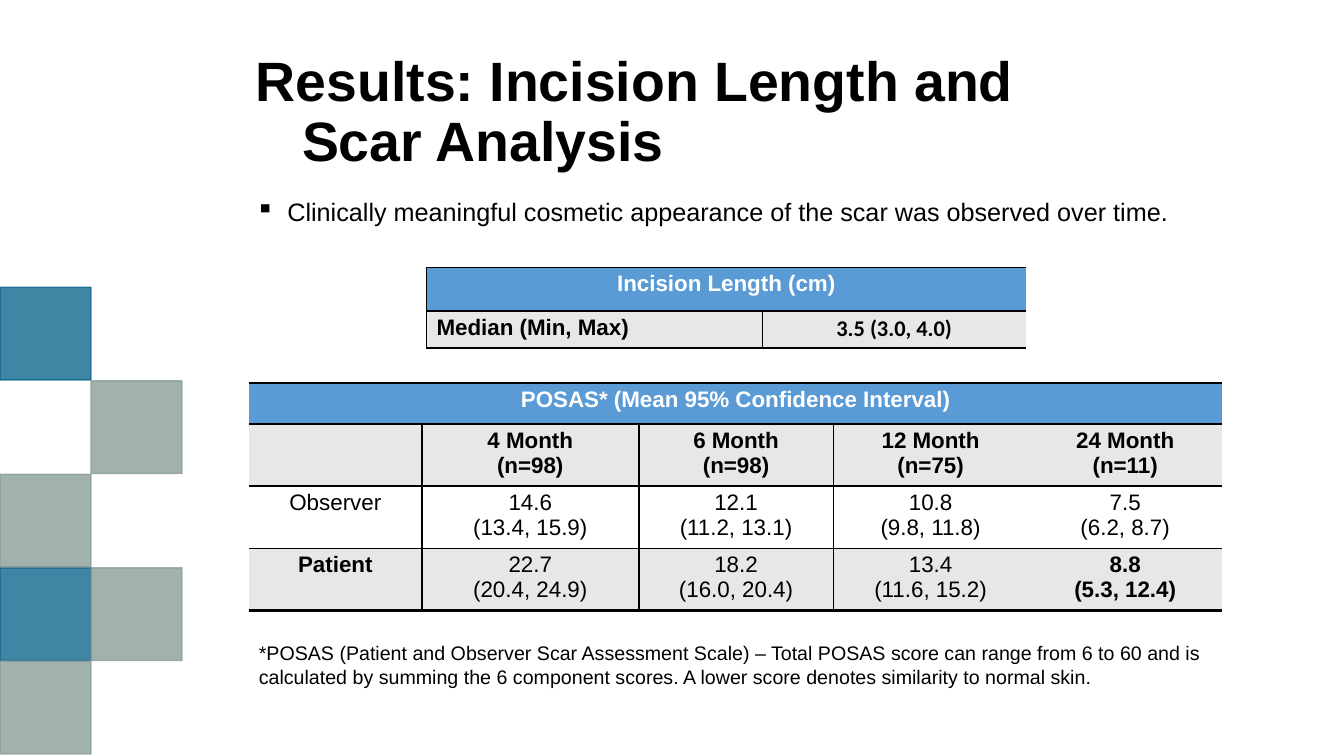
from lxml.etree import SubElement
from pptx import Presentation
from pptx.dml.color import RGBColor
from pptx.enum.shapes import MSO_SHAPE
from pptx.enum.text import MSO_ANCHOR, PP_ALIGN
from pptx.oxml.ns import qn
from pptx.util import Pt

BLACK = RGBColor(0x00, 0x00, 0x00)
WHITE = RGBColor(0xFF, 0xFF, 0xFF)
HEADER_BLUE = RGBColor(0x5B, 0x9B, 0xD5)
BAND_GREY = RGBColor(0xE7, 0xE7, 0xE7)
TEAL = RGBColor(0x00, 0x5D, 0x85)
SAGE = RGBColor(0x82, 0x97, 0x94)

SQUARES = [(0, 0, TEAL), (0, 3, TEAL), (0, 4, SAGE),
           (1, 1, SAGE), (1, 3, SAGE), (0, 2, SAGE)]
POSAS = [
    ["", "4 Month\n(n=98)", "6 Month\n(n=98)", "12 Month\n(n=75)", "24 Month\n(n=11)"],
    ["Observer", "14.6\n(13.4, 15.9)", "12.1\n(11.2, 13.1)", "10.8\n(9.8, 11.8)", "7.5\n(6.2, 8.7)"],
    ["Patient", "22.7\n(20.4, 24.9)", "18.2\n(16.0, 20.4)", "13.4\n(11.6, 15.2)", "8.8\n(5.3, 12.4)"],
]


def style(p, size, color=BLACK, bold=False, font="Arial"):
    p.font.name = font
    p.font.size = Pt(size)
    p.font.bold = bold
    p.font.color.rgb = color


def hang(p, indent):
    pPr = p._p.get_or_add_pPr()
    pPr.set("marL", str(Pt(indent)))
    pPr.set("indent", str(-Pt(indent)))
    return pPr


def add_text(slide, box, text, size, bold=False, anchor=MSO_ANCHOR.TOP):
    tf = slide.shapes.add_textbox(*map(Pt, box)).text_frame
    tf.word_wrap = True
    tf.vertical_anchor = anchor
    p = tf.paragraphs[0]
    p.text = text
    style(p, size, bold=bold)
    return p


def add_title(slide, box):
    p = add_text(slide, box, "Results: Incision Length and\vScar Analysis",
                 39.6, True, MSO_ANCHOR.MIDDLE)
    p.line_spacing = 0.9
    hang(p, 33)


def add_finding(slide, box):
    p = add_text(slide, box, "Clinically meaningful cosmetic appearance of the scar "
                 "was observed over time.", 18)
    SubElement(hang(p, 22.5), qn("a:buChar"), char="▪")


def add_squares(slide, box):
    left, top, width, height = box
    col_step, row_step = width / 2, height / 5
    for col, row, color in SQUARES:
        sp = slide.shapes.add_shape(
            MSO_SHAPE.RECTANGLE, Pt(left + col * col_step), Pt(top + row * row_step),
            Pt(col_step), Pt(row_step - 0.6))
        sp.shadow.inherit = False
        sp.fill.solid()
        sp.fill.fore_color.rgb = color
        sp.line.color.rgb = color
        sp.line.width = Pt(1)
        for clr in sp._element.spPr.iter(qn("a:srgbClr")):
            SubElement(clr, qn("a:alpha"), val="75000")


def set_borders(cell, widths):
    tcPr = cell._tc.get_or_add_tcPr()
    for side, width in zip("LRTB", widths):
        ln = SubElement(tcPr, qn(f"a:ln{side}"), w=str(Pt(width)))
        if width:
            SubElement(SubElement(ln, qn("a:solidFill")), qn("a:srgbClr"), val=str(BLACK))
        else:
            SubElement(ln, qn("a:noFill"))


def fill_cell(cell, text, fill, color=BLACK, bold=False,
              align=PP_ALIGN.CENTER, font="Arial"):
    cell.margin_top = cell.margin_bottom = Pt(3)
    cell.fill.solid()
    cell.fill.fore_color.rgb = fill
    cell.text = text
    for p in cell.text_frame.paragraphs:
        p.alignment = align
        style(p, 16, color, bold, font)


def add_grid(slide, box, col_widths, row_heights, heading):
    table = slide.shapes.add_table(len(row_heights), len(col_widths), *map(Pt, box)).table
    table.first_row = table.horz_banding = False
    for column, width in zip(table.columns, col_widths):
        column.width = Pt(width)
    for row, height in zip(table.rows, row_heights):
        row.height = Pt(height)
    table.cell(0, 0).merge(table.cell(0, len(col_widths) - 1))
    fill_cell(table.cell(0, 0), heading, HEADER_BLUE, WHITE, True)
    return table


def add_incision_table(slide, box):
    width = box[2]
    table = add_grid(slide, box, [width * 0.56, width * 0.44], [31.25, 26.5],
                     "Incision Length (cm)")
    borders = [[(1, 0, 1, 2), (0, 1, 1, 2)], [(1, 1, 2, 2), (1, 0, 2, 2)]]
    for r, row in enumerate(borders):
        for c, widths in enumerate(row):
            set_borders(table.cell(r, c), widths)
    fill_cell(table.cell(1, 0), "Median (Min, Max)", BAND_GREY, bold=True,
              align=PP_ALIGN.LEFT)
    fill_cell(table.cell(1, 1), "3.5 (3.0, 4.0)", BAND_GREY, bold=True, font="Calibri")


def add_posas_table(slide, box):
    table = add_grid(slide, box, [123.5, 155, 139, 139, 139], [29.25] + [42.75] * 3,
                     "POSAS* (Mean 95% Confidence Interval)")
    last_row, last_col = len(POSAS), len(POSAS[0]) - 1
    horizontal = [2, 2, 1, 1, 2]
    vertical = [0, 1.5, 1.5, 1, 0]
    for c in range(last_col + 1):
        set_borders(table.cell(0, c), (0, 0, *horizontal[:2]))
    for r, row in enumerate(POSAS, 1):
        for c, text in enumerate(row):
            cell = table.cell(r, c)
            right = vertical[c + 1] if c < last_col else 0
            set_borders(cell, (vertical[c], right, *horizontal[r:r + 2]))
            bold = r == 1 or (r == last_row and c in (0, last_col))
            fill_cell(cell, text, WHITE if r == 2 else BAND_GREY, bold=bold)


def main():
    prs = Presentation()
    prs.slide_width, prs.slide_height = Pt(960), Pt(540)
    slide = prs.slides.add_slide(prs.slide_layouts[6])
    add_squares(slide, (0, 205.2, 130, 334))
    add_title(slide, (175.7, 44.6, 723, 73.5))
    add_posas_table(slide, (177.8, 273.6, 695.5, 157.5))
    add_finding(slide, (175.7, 136.8, 714, 29))
    add_text(slide, (177.8, 454.3, 695.5, 41),
             "*POSAS (Patient and Observer Scar Assessment Scale) – Total POSAS score can "
             "range from 6 to 60 and is calculated by summing the 6 component scores. "
             "A lower score denotes similarity to normal skin.", 14)
    add_incision_table(slide, (304.6, 190.8, 428.4, 57.75))
    prs.save("out.pptx")


if __name__ == "__main__":
    main()
